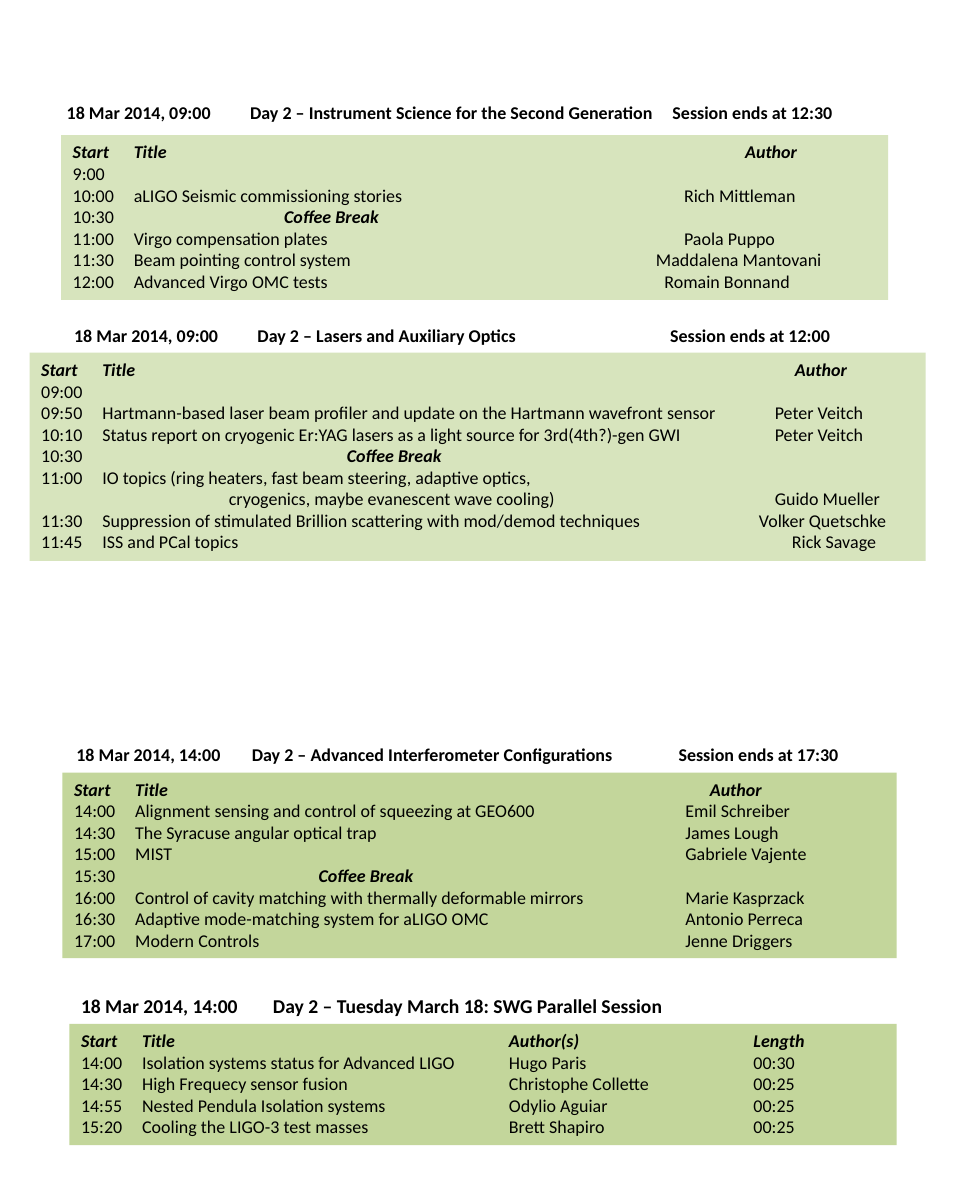
"""Builds the one-page Day 2 programme with its four parallel sessions."""
from pptx import Presentation
from pptx.dml.color import RGBColor
from pptx.enum.shapes import MSO_SHAPE
from pptx.enum.text import MSO_ANCHOR, PP_ALIGN
from pptx.oxml.ns import qn
from pptx.util import Cm, Pt
from lxml.etree import SubElement

BLACK = RGBColor(0x00, 0x00, 0x00)
MORNING = RGBColor(0xD7, 0xE4, 0xBD)
AFTERNOON = RGBColor(0xC3, 0xD6, 0x9B)
TAB_UNIT = 1.32
BREAK = "Coffee Break"

SESSIONS = [
    {
        "heading": ["18 Mar 2014, 09:00",
                    ("Day 2 – Instrument Science for the Second Generation", 3),
                    ("Session ends at 12:30", 9.91)],
        "heading_box": (1.19, 2.08, 17.98, 0.74), "size": 11,
        "panel_box": (1.32, 2.92, 17.86, 3.56), "color": MORNING,
        "columns": (0, 1, 10),
        "rows": [
            ["Start", "Title", ("Author", 11)],
            ["9:00"],
            ["10:00", "aLIGO Seismic commissioning stories", "Rich Mittleman"],
            ["10:30", (BREAK, 3.46)],
            ["11:00", "Virgo compensation plates", "Paola Puppo"],
            ["11:30", "Beam pointing control system", ("Maddalena Mantovani", 9.54)],
            ["12:00", "Advanced Virgo OMC tests", ("Romain Bonnand", 9.68)],
        ],
    },
    {
        "heading": ["18 Mar 2014, 09:00",
                    ("Day 2 – Lasers and Auxiliary Optics", 3),
                    ("Session ends at 12:00", 9.75)],
        "heading_box": (1.35, 6.88, 17.98, 0.74), "size": 11,
        "panel_box": (0.64, 7.62, 19.35, 4.5), "color": MORNING,
        "columns": (0, 1, 12),
        "rows": [
            ["Start", "Title", ("Author", 12.33)],
            ["09:00"],
            ["09:50", "Hartmann-based laser beam profiler and update on the "
                      "Hartmann wavefront sensor", "Peter Veitch"],
            ["10:10", "Status report on cryogenic Er:YAG lasers as a light source "
                      "for 3rd(4th?)-gen GWI", "Peter Veitch"],
            ["10:30", (BREAK, 5)],
            ["11:00", "IO topics (ring heaters, fast beam steering, adaptive optics,"],
            ["", ("cryogenics, maybe evanescent wave cooling)", 3.07), "Guido Mueller"],
            ["11:30", "Suppression of stimulated Brillion scattering with mod/demod "
                      "techniques", ("Volker Quetschke", 11.74)],
            ["11:45", "ISS and PCal topics", ("Rick Savage", 12.28)],
        ],
    },
    {
        "heading": ["18 Mar 2014, 14:00",
                    ("Day 2 – Advanced Interferometer Configurations", 2.87),
                    ("Session ends at 17:30", 9.85)],
        "heading_box": (1.4, 15.93, 17.83, 0.74), "size": 11,
        "panel_box": (1.35, 16.69, 18.01, 4.01), "color": AFTERNOON,
        "columns": (0, 1, 10),
        "rows": [
            ["Start", "Title", ("Author", 10.4)],
            ["14:00", "Alignment sensing and control of squeezing at GEO600",
             "Emil Schreiber"],
            ["14:30", "The Syracuse angular optical trap", "James Lough"],
            ["15:00", "MIST", "Gabriele Vajente"],
            ["15:30", (BREAK, 4)],
            ["16:00", "Control of cavity matching with thermally deformable mirrors",
             "Marie Kasprzack"],
            ["16:30", "Adaptive mode-matching system for aLIGO OMC", "Antonio Perreca"],
            ["17:00", "Modern Controls", "Jenne Driggers"],
        ],
    },
    {
        "heading": ["18 Mar 2014, 14:00",
                    ("Day 2 – Tuesday March 18: SWG Parallel Session", 3.14)],
        "heading_box": (1.5, 21.34, 13.61, 0.76), "size": 12,
        "panel_box": (1.5, 22.12, 17.86, 2.62), "color": AFTERNOON,
        "columns": (0, 1, 7, 11),
        "rows": [
            ["Start", "Title", "Author(s)", "Length"],
            ["14:00", "Isolation systems status for Advanced LIGO", "Hugo Paris", "00:30"],
            ["14:30", "High Frequecy sensor fusion", "Christophe Collette", "00:25"],
            ["14:55", "Nested Pendula Isolation systems", "Odylio Aguiar", "00:25"],
            ["15:20", "Cooling the LIGO-3 test masses", "Brett Shapiro", "00:25"],
        ],
    },
]


class ProgrammePage:
    """Holds the text style and the current slide."""

    def __init__(self, page):
        """Keep the page and the shared font values."""
        self.page = page
        self.style = {"name": "Calibri", "bold": False, "italic": False}

    def add_line(self, para, cells, columns, **changes):
        """Write cells into a paragraph, each one at its own tab stop."""
        para.alignment = PP_ALIGN.LEFT
        stops = SubElement(para._p.get_or_add_pPr(), qn("a:tabLst"))
        for index, cell in enumerate(cells):
            text, unit = cell if isinstance(cell, tuple) else (cell, columns[index])
            if index:
                SubElement(stops, qn("a:tab"), pos=str(Cm(unit * TAB_UNIT)), algn="l")
            span = para.add_run()
            span.text = "\t" + text if index else text
            emphasis = {"bold": True, "italic": True} if text == BREAK else {}
            for name, value in {**self.style, **changes, **emphasis}.items():
                setattr(span.font, name, value)
            span.font.color.rgb = BLACK

    def add_heading(self, cells, box, size):
        """Add the bold line above a session."""
        frame = self.page.shapes.add_textbox(*map(Cm, box)).text_frame
        frame.word_wrap = True
        self.add_line(frame.paragraphs[0], cells, (0,), size=Pt(size), bold=True)

    def add_panel(self, rows, columns, box, color):
        """Add the coloured rectangle that lists the talks."""
        panel = self.page.shapes.add_shape(MSO_SHAPE.RECTANGLE, *map(Cm, box))
        panel.shadow.inherit = False
        panel.fill.solid()
        panel.fill.fore_color.rgb = color
        panel.line.fill.background()
        frame = panel.text_frame
        frame.word_wrap = True
        frame.vertical_anchor = MSO_ANCHOR.TOP
        for index, cells in enumerate(rows):
            para = frame.add_paragraph() if index else frame.paragraphs[0]
            header = index == 0
            self.add_line(para, cells, columns, size=Pt(11), bold=header, italic=header)


def main():
    """Build the programme and save it."""
    deck = Presentation()
    deck.slide_width, deck.slide_height = Cm(20.75), Cm(26.01)
    programme = ProgrammePage(deck.slides.add_slide(deck.slide_layouts[6]))
    for session in SESSIONS:
        programme.add_heading(session["heading"], session["heading_box"], session["size"])
        programme.add_panel(session["rows"], session["columns"],
                            session["panel_box"], session["color"])
    deck.save("out.pptx")


if __name__ == "__main__":
    main()
